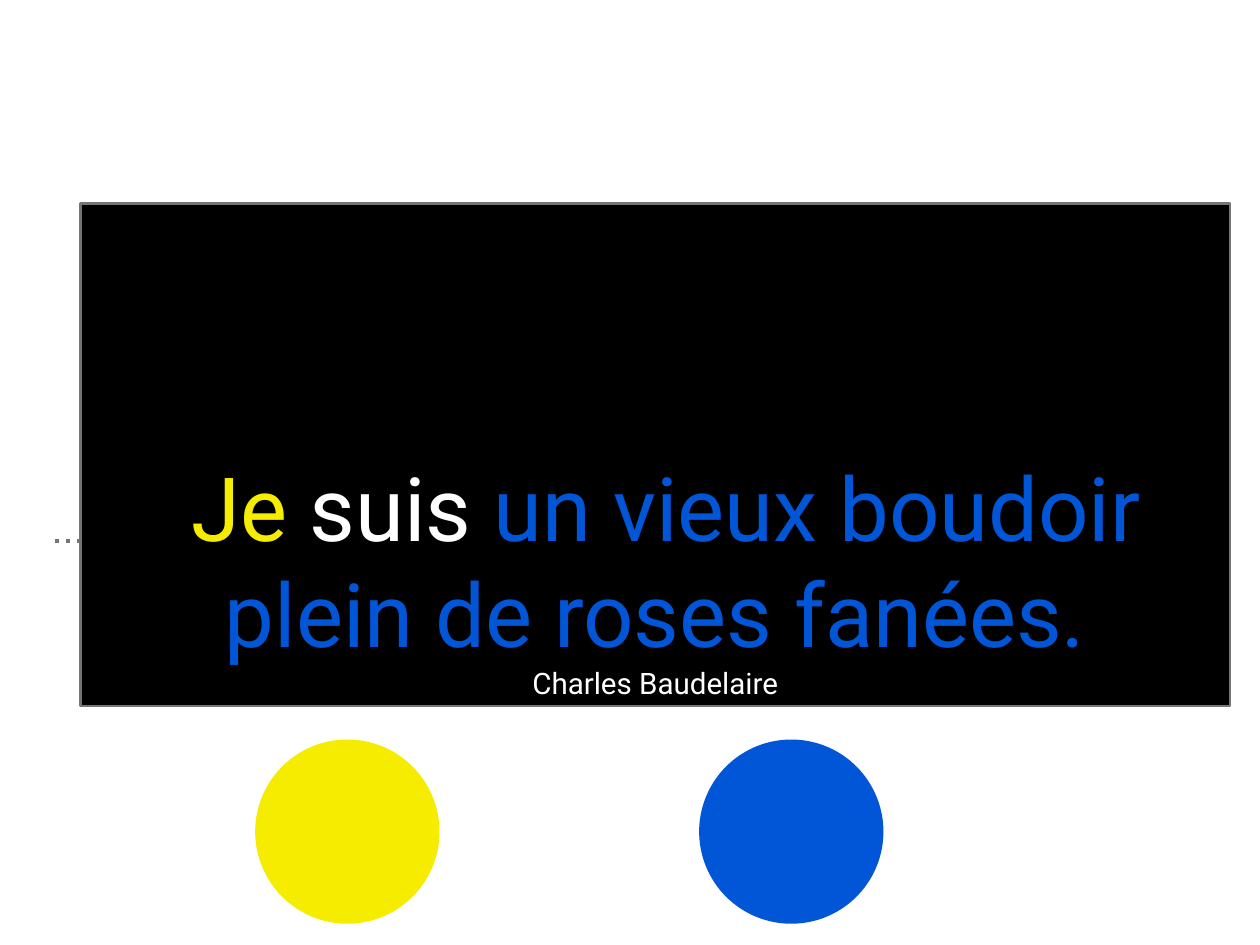
from typing import NamedTuple

from lxml.etree import SubElement
from pptx import Presentation
from pptx.dml.color import RGBColor
from pptx.enum.shapes import MSO_CONNECTOR, MSO_SHAPE
from pptx.enum.text import MSO_ANCHOR, MSO_AUTO_SIZE, PP_ALIGN
from pptx.oxml.ns import qn
from pptx.shapes.autoshape import Shape
from pptx.slide import Slide
from pptx.util import Inches, Pt

YELLOW = RGBColor(0xF5, 0xEC, 0x00)
BLUE = RGBColor(0x00, 0x56, 0xD6)
WHITE = RGBColor(0xFF, 0xFF, 0xFF)
BLACK = RGBColor(0x00, 0x00, 0x00)
GREY = RGBColor(0x74, 0x76, 0x76)
FONT = "Roboto"


class Phrase(NamedTuple):
    text: str
    color: RGBColor
    size: int = 72


class Disc(NamedTuple):
    left: float
    color: RGBColor


QUOTE = [
    [
        Phrase(" ", WHITE),
        Phrase("Je", YELLOW),
        Phrase(" suis ", WHITE),
        Phrase("un vieux boudoir plein de roses fanées.", BLUE),
    ],
    [Phrase("Charles Baudelaire", WHITE, 24)],
]
DISCS = [Disc(2.88, YELLOW), Disc(7.89, BLUE)]
DISC_TOP, DISC_SIZE = 8.35, 2.08


def add_dotted_rule(slide: Slide) -> None:
    """Draw the dotted line that runs behind the quote panel."""
    rule = slide.shapes.add_connector(
        MSO_CONNECTOR.STRAIGHT, Inches(0.62), Inches(6.11), Inches(13.61), Inches(6.11)
    )
    rule.line.color.rgb = GREY
    rule.line.width = Pt(3)
    outline = rule.line._get_or_add_ln()
    dashes = SubElement(outline, qn("a:custDash"))
    SubElement(dashes, qn("a:ds"), d="100000", sp="200000")
    SubElement(rule._element.spPr, qn("a:effectLst"))
    slide.shapes._spTree.insert(2, rule._element)


def fill_quote(panel: Shape) -> None:
    panel.left, panel.top = Inches(0.91), Inches(2.3)
    panel.width, panel.height = Inches(12.97), Inches(5.67)
    panel.fill.solid()
    panel.fill.fore_color.rgb = BLACK
    panel.line.color.rgb = GREY
    panel.line.width = Pt(2)
    frame = panel.text_frame
    frame.word_wrap = True
    frame.auto_size = MSO_AUTO_SIZE.NONE
    frame.vertical_anchor = MSO_ANCHOR.BOTTOM
    frame.margin_left = frame.margin_right = Inches(0.06)
    frame.margin_top = frame.margin_bottom = Inches(0.06)
    for index, phrases in enumerate(QUOTE):
        paragraph = frame.add_paragraph() if index else frame.paragraphs[0]
        paragraph.alignment = PP_ALIGN.CENTER
        for phrase in phrases:
            run = paragraph.add_run()
            run.text = phrase.text
            run.font.name = FONT
            run.font.size = Pt(phrase.size)
            run.font.color.rgb = phrase.color


def add_disc(slide: Slide, disc: Disc) -> None:
    circle = slide.shapes.add_shape(
        MSO_SHAPE.OVAL, Inches(disc.left), Inches(DISC_TOP), Inches(DISC_SIZE), Inches(DISC_SIZE)
    )
    circle.shadow.inherit = False
    circle.fill.solid()
    circle.fill.fore_color.rgb = disc.color
    circle.line.fill.background()


def main() -> None:
    deck = Presentation()
    deck.slide_width, deck.slide_height = Inches(14.22), Inches(10.67)
    slide = deck.slides.add_slide(deck.slide_layouts[0])
    slide.background.fill.solid()
    slide.background.fill.fore_color.rgb = WHITE
    subtitle = slide.placeholders[1]._element
    subtitle.getparent().remove(subtitle)
    add_dotted_rule(slide)
    fill_quote(slide.shapes.title)
    for disc in DISCS:
        add_disc(slide, disc)
    deck.save("out.pptx")


if __name__ == "__main__":
    main()
